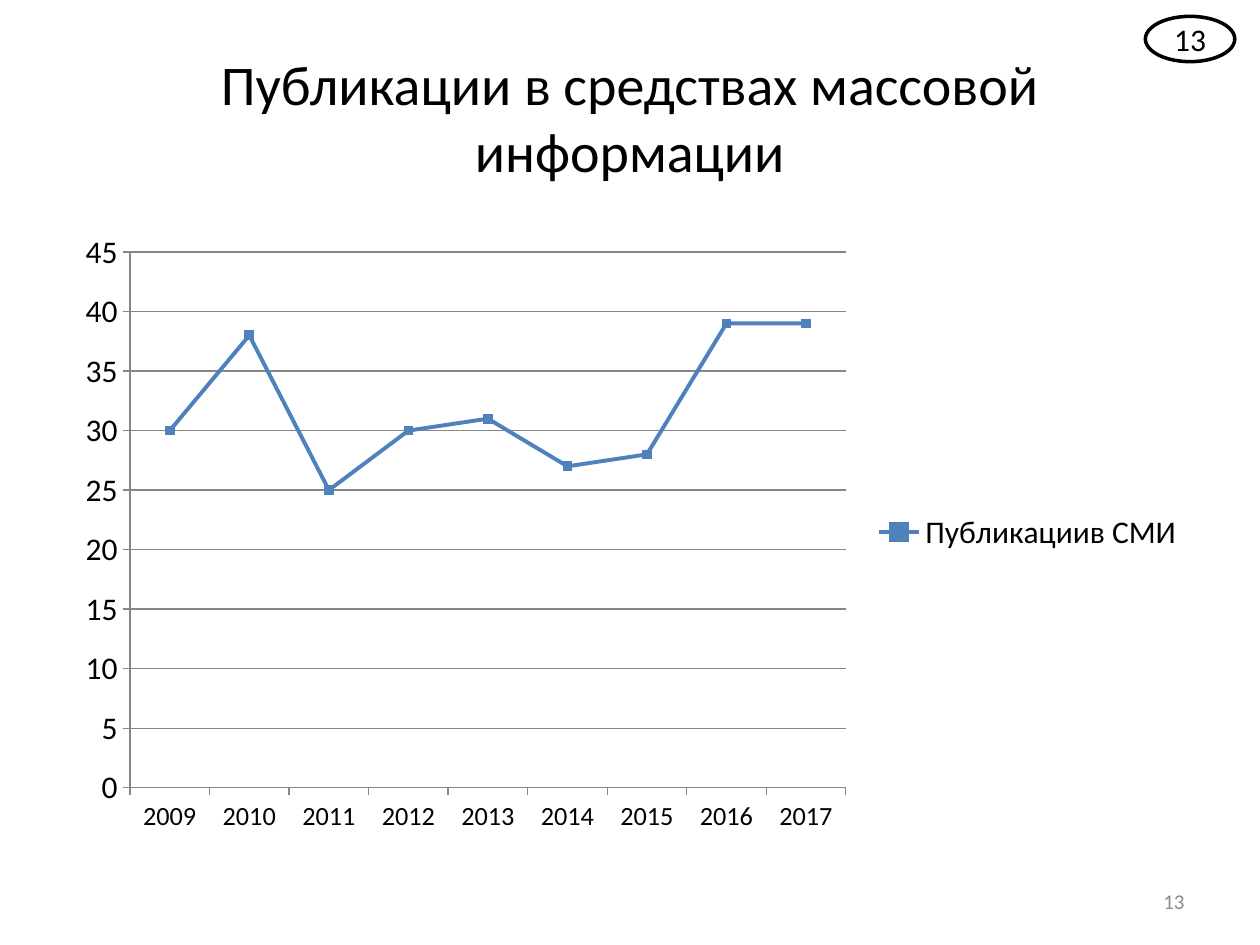
"""Build a slide with a line chart of yearly media publications."""
from dataclasses import dataclass

import pptx
import pptx.chart.data
import pptx.dml.color
import pptx.enum.chart
import pptx.enum.shapes
import pptx.enum.text
import pptx.util

Inches = pptx.util.Inches
Align = pptx.enum.text.PP_ALIGN
FONT = "Calibri"
BLACK, WHITE, GRAY, AXIS_GRAY, BLUE = "000000", "FFFFFF", "8C8C8C", "868686", "4F81BD"
PUBLICATIONS = {
    "2009": 30, "2010": 38, "2011": 25, "2012": 30, "2013": 31,
    "2014": 27, "2015": 28, "2016": 39, "2017": 39,
}


@dataclass(frozen=True)
class Label:
    """A one-paragraph text with its place and look."""

    text: str
    left: float
    top: float
    width: float
    height: float
    size: float
    align: Align
    color: str = BLACK
    inset: float = 0.1
    oval: bool = False


LABELS = (
    Label("Публикации в средствах массовой информации", 0.5, 0.3, 9, 1.25, 32, Align.CENTER),
    Label("13", 7.17, 6.95, 2.33, 0.4, 12, Align.RIGHT, GRAY),
    Label("13", 9.09, 0.13, 0.71, 0.36, 18, Align.CENTER, inset=0, oval=True),
)


def rgb(color: str) -> pptx.dml.color.RGBColor:
    """Turn a hex string into a colour."""
    return pptx.dml.color.RGBColor.from_string(color)


def apply(target, **values) -> None:
    """Set each given attribute on the target."""
    for name, value in values.items():
        setattr(target, name, value)


def style_font(font, size: float, color: str) -> None:
    """Set the typeface, size and colour of a font."""
    apply(font, name=FONT, size=pptx.util.Pt(size), bold=False)
    font.color.rgb = rgb(color)


def style_line(line, color: str, width: float) -> None:
    """Set the colour and width of a line."""
    line.color.rgb = rgb(color)
    line.width = pptx.util.Pt(width)


def add_label(page, label: Label) -> None:
    """Draw a label as a text box or as an outlined oval."""
    place = [Inches(n) for n in (label.left, label.top, label.width, label.height)]
    if label.oval:
        box = page.shapes.add_shape(pptx.enum.shapes.MSO_SHAPE.OVAL, *place)
        box.shadow.inherit = False
        box.fill.solid()
        box.fill.fore_color.rgb = rgb(WHITE)
        style_line(box.line, BLACK, 2)
    else:
        box = page.shapes.add_textbox(*place)
    frame = box.text_frame
    apply(
        frame,
        word_wrap=True,
        vertical_anchor=pptx.enum.text.MSO_ANCHOR.MIDDLE,
        margin_left=Inches(label.inset),
        margin_right=Inches(label.inset),
        margin_top=Inches(label.inset / 2),
        margin_bottom=Inches(label.inset / 2),
    )
    para = frame.paragraphs[0]
    para.alignment = label.align
    span = para.add_run()
    span.text = label.text
    style_font(span.font, label.size, label.color)


def add_publications_chart(page) -> None:
    """Draw the line chart of publications per year."""
    data = pptx.chart.data.CategoryChartData(number_format="General")
    data.categories = list(PUBLICATIONS)
    data.add_series("Публикациив СМИ", list(PUBLICATIONS.values()))
    chart = page.shapes.add_chart(
        pptx.enum.chart.XL_CHART_TYPE.LINE_MARKERS,
        Inches(0.5), Inches(1.75), Inches(9), Inches(4.95), data,
    ).chart
    apply(chart, has_title=False, has_legend=True)
    style_font(chart.font, 18, BLACK)
    apply(
        chart.legend,
        position=pptx.enum.chart.XL_LEGEND_POSITION.RIGHT,
        include_in_layout=False,
    )
    for axis, size in ((chart.category_axis, 15), (chart.value_axis, 18)):
        axis.major_tick_mark = pptx.enum.chart.XL_TICK_MARK.OUTSIDE
        style_font(axis.tick_labels.font, size, BLACK)
        style_line(axis.format.line, AXIS_GRAY, 0.75)
    apply(chart.value_axis, minimum_scale=0, maximum_scale=45, major_unit=5)
    style_line(chart.value_axis.major_gridlines.format.line, AXIS_GRAY, 0.75)
    plot = chart.plots[0]
    plot.vary_by_categories = False
    series = plot.series[0]
    series.smooth = False
    style_line(series.format.line, BLUE, 2.25)
    apply(series.marker, style=pptx.enum.chart.XL_MARKER_STYLE.SQUARE, size=5)
    series.marker.format.fill.solid()
    series.marker.format.fill.fore_color.rgb = rgb(BLUE)
    style_line(series.marker.format.line, BLUE, 0.75)


def main() -> None:
    """Assemble and save the deck."""
    deck = pptx.Presentation()
    apply(deck, slide_width=Inches(10), slide_height=Inches(7.5))
    page = deck.slides.add_slide(deck.slide_layouts[6])
    add_publications_chart(page)
    for label in LABELS:
        add_label(page, label)
    deck.save("out.pptx")


if __name__ == "__main__":
    main()
